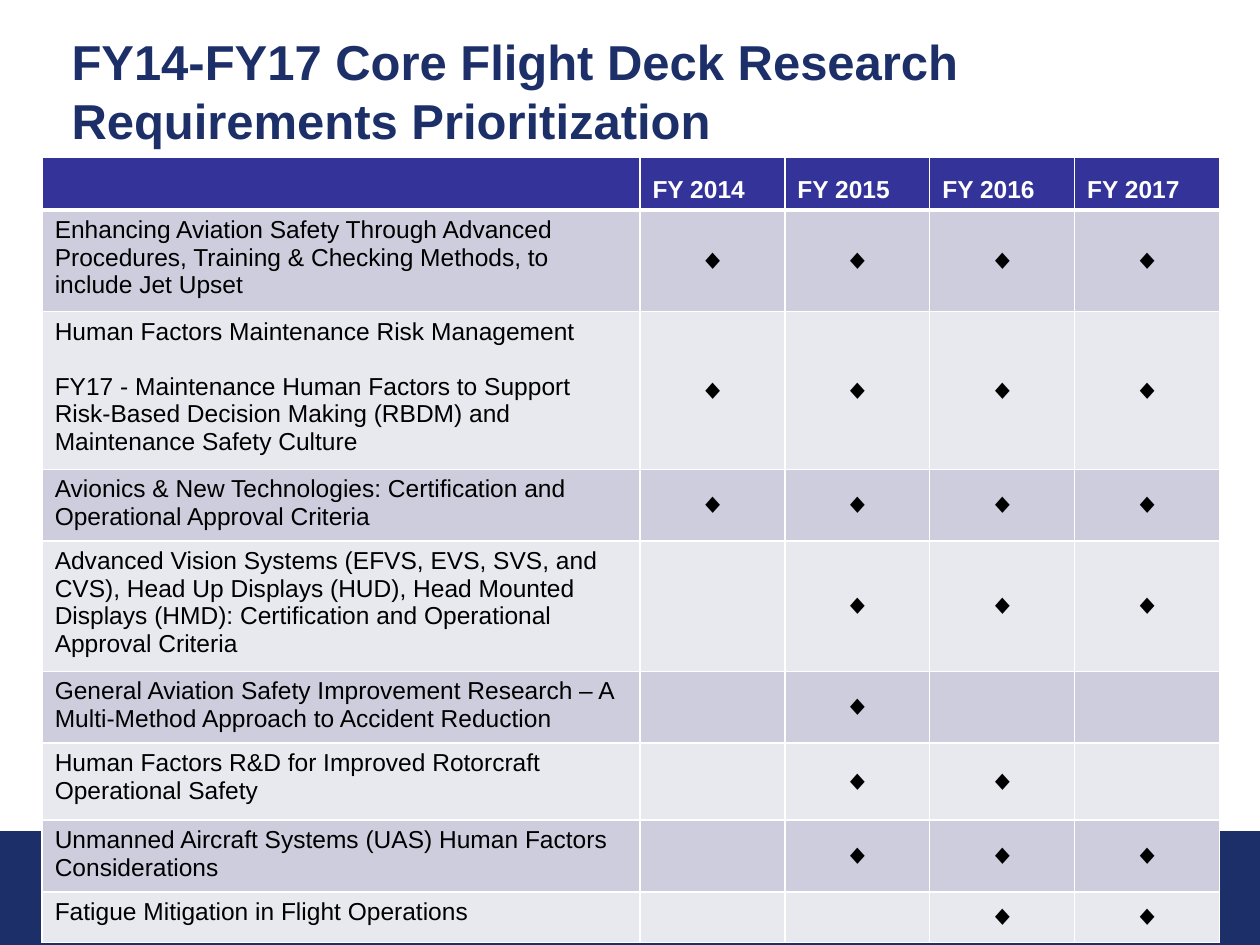
from lxml.etree import fromstring
from pptx import Presentation
from pptx.dml.color import RGBColor
from pptx.enum.shapes import MSO_SHAPE as Shape
from pptx.enum.text import MSO_ANCHOR as Anchor, PP_ALIGN as Align
from pptx.oxml.ns import nsdecls
from pptx.util import Pt

NAVY, WHITE, BLACK = "1D2F68", "FFFFFF", "000000"
HEADER, BANDS = "333399", ("CDCDDE", "E8E8EF")


def color(value):
    return RGBColor.from_string(value)


def add_run(paragraph, text, size, fill, bold=False):
    run = paragraph.add_run()
    run.text = text
    run.font.name = "Arial"
    run.font.size = Pt(size)
    run.font.bold = bold
    run.font.color.rgb = color(fill)


presentation = Presentation()
presentation.slide_width, presentation.slide_height = Pt(720), Pt(540)
slide = presentation.slides.add_slide(presentation.slide_layouts[6])
slide.background.fill.solid()
slide.background.fill.fore_color.rgb = color(WHITE)

footer = slide.shapes.add_shape(Shape.RECTANGLE, Pt(0), Pt(475.2), Pt(720), Pt(64.4))
footer.shadow.inherit = False
footer.fill.solid()
footer.fill.fore_color.rgb = color(NAVY)
footer.line.color.rgb = color(NAVY)
footer.line.width = Pt(0.75)

title = slide.shapes.add_textbox(Pt(33.8), Pt(27.4), Pt(680.4), Pt(48.2))
title.text_frame.word_wrap = True
title.text_frame.vertical_anchor = Anchor.MIDDLE
add_run(title.text_frame.paragraphs[0],
        "FY14-FY17 Core Flight Deck Research Requirements Prioritization", 28, NAVY, True)

years = (2014, 2015, 2016, 2017)
requirements = [
    (58, years, ["Enhancing Aviation Safety Through Advanced Procedures, "
                 "Training & Checking Methods, to include Jet Upset"]),
    (86, years, ["Human Factors Maintenance Risk Management",
                 "FY17 - Maintenance Human Factors to Support Risk-Based "
                 "Decision Making (RBDM) and Maintenance Safety Culture"]),
    (41, years, ["Avionics & New Technologies: Certification and "
                 "Operational Approval Criteria"]),
    (74, years[1:], ["Advanced Vision Systems (EFVS, EVS, SVS, and CVS), Head Up Displays (HUD), "
                     "Head Mounted Displays (HMD): Certification and Operational Approval Criteria"]),
    (41, (2015,), ["General Aviation Safety Improvement Research – A "
                   "Multi-Method Approach to Accident Reduction"]),
    (44, (2015, 2016), ["Human Factors R&D for Improved Rotorcraft Operational Safety"]),
    (41, years[1:], ["Unmanned Aircraft Systems (UAS) Human Factors Considerations"]),
    (29, years[2:], ["Fatigue Mitigation in Flight Operations"]),
]
heights = [30] + [height for height, _, _ in requirements]
widths = [341.6] + [82.8] * len(years)

table = slide.shapes.add_table(len(heights), len(widths), Pt(24.1), Pt(90),
                               Pt(sum(widths)), Pt(sum(heights))).table
table.horz_banding = False
for column, width in zip(table.columns, widths):
    column.width = Pt(width)
for row, height in zip(table.rows, heights):
    row.height = Pt(height)

for index, year in enumerate(years, 1):
    cell = table.cell(0, index)
    cell.vertical_anchor = Anchor.BOTTOM
    add_run(cell.text_frame.paragraphs[0], f"FY {year}", 14, WHITE, True)

for row_index, (_, funded, texts) in enumerate(requirements, 1):
    frame = table.cell(row_index, 0).text_frame
    for number, text in enumerate(texts):
        paragraph = frame.add_paragraph() if number else frame.paragraphs[0]
        if number:
            paragraph.space_before = Pt(15.7)
        add_run(paragraph, text, 14, BLACK)
    for year in funded:
        cell = table.cell(row_index, 1 + years.index(year))
        cell.vertical_anchor = Anchor.MIDDLE
        paragraph = cell.text_frame.paragraphs[0]
        paragraph.alignment = Align.CENTER
        add_run(paragraph, "◆", 16, BLACK)

for row_index, row in enumerate(table.rows):
    for cell in row.cells:
        cell.fill.solid()
        cell.fill.fore_color.rgb = color(BANDS[(row_index - 1) % 2] if row_index else HEADER)
        properties = cell._tc.get_or_add_tcPr()
        for position, side in enumerate("LRTB"):
            thick = (row_index, side) in ((0, "B"), (1, "T"))
            properties.insert(position, fromstring(
                f'<a:ln{side} {nsdecls("a")} w="{Pt(3 if thick else 1)}"><a:solidFill>'
                f'<a:srgbClr val="{WHITE}"/></a:solidFill></a:ln{side}>'))

presentation.save("out.pptx")
